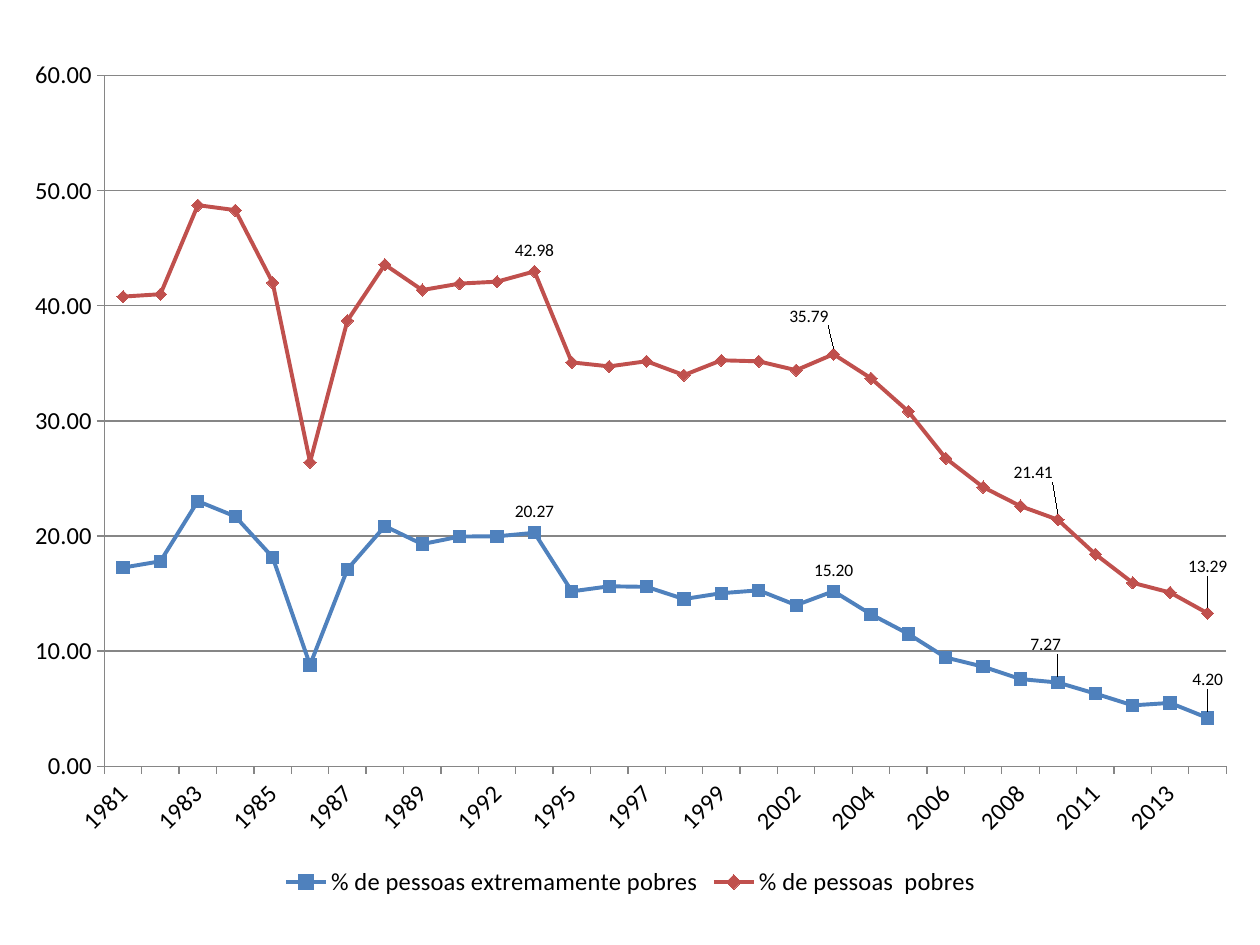
from lxml import etree
from pptx import Presentation
from pptx import util as u
from pptx.chart import data as d
from pptx.dml.color import RGBColor
from pptx.enum import chart as c
from pptx.oxml import ns

BLUE = RGBColor(0x4F, 0x81, 0xBD)
RED = RGBColor(0xC0, 0x50, 0x4D)
GRAY = RGBColor(0x86, 0x86, 0x86)
BLACK = RGBColor(0, 0, 0)

SKIPPED_YEARS = {1991, 1994, 2000, 2010}
YEARS = [str(year) for year in range(1981, 2015) if year not in SKIPPED_YEARS]
EXTREME_POVERTY = [
    17.25, 17.80, 23.02, 21.70, 18.15, 8.80, 17.11, 20.85, 19.29, 19.95,
    19.97, 20.27, 15.19, 15.63, 15.58, 14.52, 15.03, 15.28, 13.99, 15.20,
    13.20, 11.49, 9.44, 8.65, 7.57, 7.27, 6.31, 5.29, 5.50, 4.20]
POVERTY = [
    40.79, 41.00, 48.73, 48.30, 42.01, 26.41, 38.71, 43.57, 41.36, 41.92,
    42.09, 42.98, 35.08, 34.73, 35.18, 33.97, 35.26, 35.17, 34.40, 35.79,
    33.70, 30.82, 26.75, 24.24, 22.59, 21.41, 18.42, 15.93, 15.09, 13.29]
SERIES = [
    {"name": "% de pessoas extremamente pobres", "values": EXTREME_POVERTY,
     "color": BLUE, "marker": c.XL_MARKER_STYLE.SQUARE, "size": 7,
     "labels": {"1993": (0, 0), "2003": (0, 0),
                "2009": (-0.01, -0.02), "2014": (0, -0.02)}},
    {"name": "% de pessoas  pobres", "values": POVERTY,
     "color": RED, "marker": c.XL_MARKER_STYLE.DIAMOND, "size": 7,
     "labels": {"1993": (0, 0), "2003": (-0.02, -0.02),
                "2009": (-0.02, -0.03), "2014": (0, -0.03)}},
]


class SlideBuilder:
    """Holds the style and the current slide, and adds the chart parts."""

    text = {"name": "Calibri", "size": u.Pt(14), "color": BLACK}
    label = {"name": "Calibri", "size": u.Pt(10), "color": BLACK}

    def __init__(self, presentation):
        self.slide = presentation.slides.add_slide(presentation.slide_layouts[6])

    def format_font(self, font, style):
        for name, value in style.items():
            if name == "color":
                font.color.rgb = value
            else:
                setattr(font, name, value)

    def format_line(self, line, color, width):
        line.color.rgb = color
        line.width = u.Pt(width)

    def set_layout(self, layout, values):
        manual = etree.SubElement(layout, ns.qn("c:manualLayout"))
        for tag, value in values.items():
            etree.SubElement(manual, ns.qn(f"c:{tag}")).set("val", str(value))

    def add_line_chart(self, left, top, width, height):
        chart_data = d.CategoryChartData(number_format="#,##0.00")
        chart_data.categories = YEARS
        for entry in SERIES:
            chart_data.add_series(entry["name"], entry["values"])
        chart = self.slide.shapes.add_chart(
            c.XL_CHART_TYPE.LINE_MARKERS, *map(u.Inches, (left, top, width, height)),
            chart_data).chart
        self.format_font(chart.font, self.text)
        chart.has_title = False
        chart.has_legend = True
        chart.legend.position = c.XL_LEGEND_POSITION.BOTTOM
        chart.legend.include_in_layout = False
        self.format_font(chart.legend.font, self.text)
        chart.plots[0].vary_by_categories = False
        plot_area = chart.element.xpath(".//c:plotArea")[0]
        for old_layout in plot_area.findall(ns.qn("c:layout")):
            plot_area.remove(old_layout)
        layout = etree.Element(ns.qn("c:layout"))
        plot_area.insert(0, layout)
        self.set_layout(layout, {
            "layoutTarget": "inner", "xMode": "edge", "yMode": "edge",
            "x": 0.076, "y": 0.038, "w": 0.904, "h": 0.804})
        return chart

    def style_axes(self, chart):
        value_axis, category_axis = chart.value_axis, chart.category_axis
        formats = {"minimum_scale": 0, "maximum_scale": 60, "major_unit": 10,
                   "has_major_gridlines": True}
        for name, value in formats.items():
            setattr(value_axis, name, value)
        value_axis.tick_labels.number_format = "#,##0.00"
        value_axis.tick_labels.number_format_is_linked = False
        self.format_line(value_axis.major_gridlines.format.line, GRAY, 0.75)
        for axis in (value_axis, category_axis):
            axis.major_tick_mark = c.XL_TICK_MARK.OUTSIDE
            self.format_font(axis.tick_labels.font, self.text)
            self.format_line(axis.format.line, GRAY, 0.75)
        element = chart.element.xpath(".//c:catAx")[0]
        element.xpath("./c:txPr/a:bodyPr")[0].set("rot", "-2700000")
        skip = etree.Element(ns.qn("c:tickLblSkip"))
        skip.set("val", "2")
        element.xpath("./c:noMultiLvlLbl")[0].addprevious(skip)

    def style_series(self, series, entry):
        series.smooth = False
        self.format_line(series.format.line, entry["color"], 2.25)
        series.marker.style = entry["marker"]
        series.marker.size = entry["size"]
        series.marker.format.fill.solid()
        series.marker.format.fill.fore_color.rgb = entry["color"]
        self.format_line(series.marker.format.line, entry["color"], 0.75)

    def add_point_labels(self, chart, index, offsets):
        series = chart.plots[0].series[index]
        for year, (x, y) in offsets.items():
            point = YEARS.index(year)
            data_label = series.points[point].data_label
            self.format_font(data_label.font, self.label)
            data_label.position = c.XL_LABEL_POSITION.ABOVE
            if x or y:
                position = chart.element.xpath(
                    f".//c:ser[c:idx/@val='{index}']//c:dLbl/c:idx[@val='{point}']")[0]
                layout = etree.Element(ns.qn("c:layout"))
                position.addnext(layout)
                self.set_layout(layout, {"x": x, "y": y})


def main():
    presentation = Presentation()
    presentation.slide_width = u.Inches(10)
    presentation.slide_height = u.Inches(7.5)
    builder = SlideBuilder(presentation)
    chart = builder.add_line_chart(0.08, 0.34, 9.85, 6.82)
    builder.style_axes(chart)
    for index, entry in enumerate(SERIES):
        builder.style_series(chart.plots[0].series[index], entry)
        builder.add_point_labels(chart, index, entry["labels"])
    presentation.save("out.pptx")


if __name__ == "__main__":
    main()
